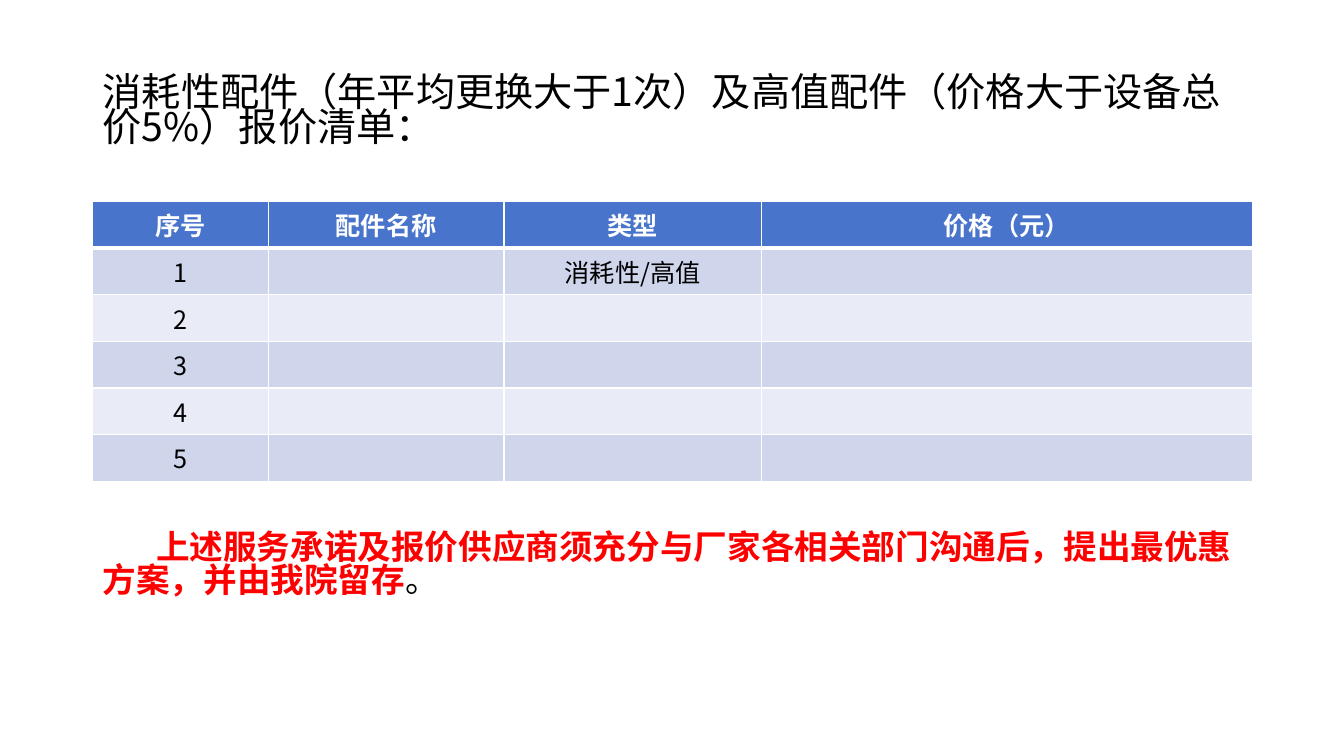
from pptx import Presentation
from pptx.dml.color import RGBColor
from pptx.enum import text as t
from pptx.oxml import parse_xml
from pptx.oxml.ns import nsdecls, qn
from pptx.util import Inches, Pt

BLACK = RGBColor(0x00, 0x00, 0x00)
WHITE = RGBColor(0xFF, 0xFF, 0xFF)
RED = RGBColor(0xFF, 0x00, 0x00)
HEADER_BLUE = RGBColor(0x48, 0x74, 0xCB)
BANDS = (RGBColor(0xCF, 0xD6, 0xEC), RGBColor(0xE9, 0xEB, 0xF6))
CHINESE_FONT = "Noto Sans CJK SC"
LATIN_FONT = "Calibri"
LEFT, WIDTH = 0.92, 11.5


class QuoteSlide:
    """Holds the slide and its text style, and adds each kind of element."""

    def __init__(self, presentation):
        self.slide = presentation.slides.add_slide(presentation.slide_layouts[5])

    def run(self, paragraph, words, size, color=BLACK, bold=False, font=CHINESE_FONT):
        run = paragraph.add_run()
        run.text = words
        run.font.size = Pt(size)
        run.font.bold = bold
        run.font.color.rgb = color
        run.font.name = font
        properties = run.font._element
        east_asian = properties.makeelement(qn("a:ea"), {"typeface": font})
        properties.find(qn("a:latin")).addnext(east_asian)

    def title(self, words, top, height):
        shape = self.slide.shapes.title
        shape.left, shape.top = Inches(LEFT), Inches(top)
        shape.width, shape.height = Inches(WIDTH), Inches(height)
        frame = shape.text_frame
        frame.word_wrap = True
        frame.auto_size = t.MSO_AUTO_SIZE.NONE
        frame.vertical_anchor = t.MSO_ANCHOR.MIDDLE
        paragraph = frame.paragraphs[0]
        paragraph.alignment = t.PP_ALIGN.LEFT
        paragraph.line_spacing = 0.76
        self.run(paragraph, words, 28)

    def borders(self, cell, bottom_width):
        properties = cell._tc.get_or_add_tcPr()
        widths = {"lnL": 1, "lnR": 1, "lnT": 1, "lnB": bottom_width}
        for position, (side, width) in enumerate(widths.items()):
            properties.insert(position, parse_xml(
                f'<a:{side} {nsdecls("a")} w="{Pt(width)}"><a:solidFill>'
                f'<a:srgbClr val="{WHITE}"/></a:solidFill></a:{side}>'))

    def table(self, rows, column_widths, top, row_height):
        table = self.slide.shapes.add_table(
            len(rows), len(column_widths), Inches(LEFT), Inches(top),
            Inches(WIDTH), Inches(row_height * len(rows))).table
        for column, width in zip(table.columns, column_widths):
            column.width = Inches(width)
        for row_index, row in enumerate(rows):
            header = row_index == 0
            for column_index, words in enumerate(row):
                cell = table.cell(row_index, column_index)
                cell.fill.solid()
                cell.fill.fore_color.rgb = HEADER_BLUE if header else BANDS[(row_index - 1) % 2]
                cell.vertical_anchor = t.MSO_ANCHOR.MIDDLE
                self.borders(cell, 3 if header else 1)
                paragraph = cell.text_frame.paragraphs[0]
                paragraph.alignment = t.PP_ALIGN.CENTER
                if words:
                    self.run(paragraph, words, 18, WHITE if header else BLACK, header)

    def note(self, words, ending, top, height):
        box = self.slide.shapes.add_textbox(
            Inches(LEFT), Inches(top), Inches(WIDTH), Inches(height))
        box.text_frame.word_wrap = True
        paragraph = box.text_frame.paragraphs[0]
        paragraph.line_spacing = 0.82
        paragraph._p.get_or_add_pPr().set("indent", str(Inches(0.53)))
        self.run(paragraph, words, 24, RED, True)
        self.run(paragraph, ending, 24, font=LATIN_FONT)


def main():
    presentation = Presentation()
    presentation.slide_width, presentation.slide_height = Inches(13.33), Inches(7.5)
    quote = QuoteSlide(presentation)
    quote.title("消耗性配件（年平均更换大于1次）及高值配件（价格大于设备总价5%）报价清单：", 0.4, 1.45)
    rows = [("序号", "配件名称", "类型", "价格（元）"), ("1", "", "消耗性/高值", "")]
    rows += [(str(number), "", "", "") for number in range(2, 6)]
    quote.table(rows, (1.74, 2.34, 2.55, 4.87), 2, 0.42)
    quote.note("上述服务承诺及报价供应商须充分与厂家各相关部门沟通后，提出最优惠方案，并由我院留存",
               "。", 5.24, 1.42)
    presentation.save("out.pptx")


if __name__ == "__main__":
    main()
